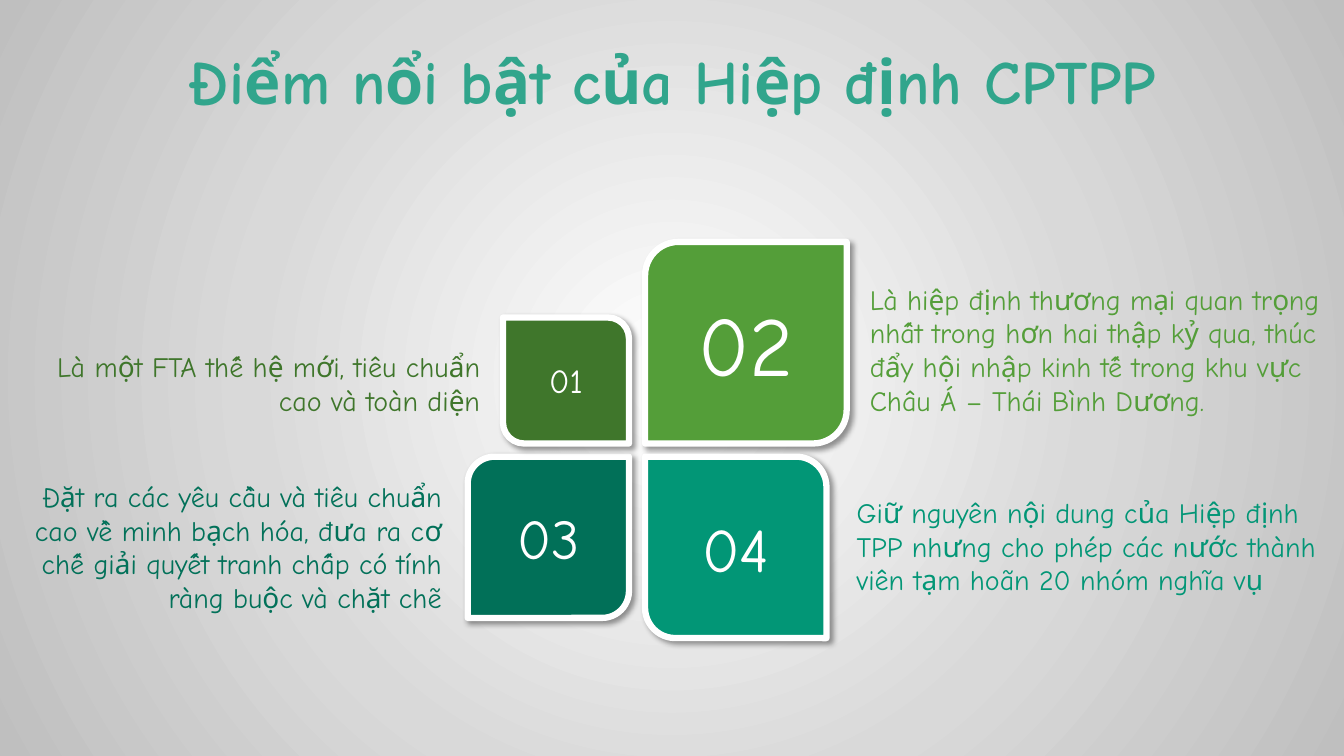
from pptx import Presentation
from pptx.util import Pt
from pptx.dml.color import RGBColor as RGB
from pptx.enum.shapes import MSO_SHAPE as Kind
from pptx.enum.text import PP_ALIGN as Align, MSO_ANCHOR as Anchor, MSO_AUTO_SIZE as Fit
from pptx.oxml import parse_xml
from pptx.oxml.ns import nsdecls

# Content: number, column, row, side, number size, flipped, fill
tiles = [
    ("02", 1, 0, 144, 60, False, "lime"),
    ("03", 0, 1, 115.2, 40, False, "pine"),
    ("01", 0, 0, 90, 24, True, "moss"),
    ("04", 1, 1, 129.6, 44, True, "teal"),
]
# Text, left, top, width, height, alignment, colour
notes = [
    ("Là một FTA thế hệ mới, tiêu chuẩn cao và toàn diện",
     2.2, 246.2, 347.8, 55.4, Align.RIGHT, "moss"),
    ("Là hiệp định thương mại quan trọng nhất trong hơn hai thập kỷ qua, "
     "thúc đẩy hội nhập kinh tế trong khu vực Châu Á – Thái Bình Dương.",
     614.2, 198, 345.6, 104.4, Align.LEFT, "lime"),
    ("Đặt ra các yêu cầu và tiêu chuẩn cao về minh bạch hóa, đưa ra cơ chế "
     "giải quyết tranh chấp có tính ràng buộc và chặt chẽ",
     0, 339.1, 322.6, 104.4, Align.RIGHT, "deep"),
    ("Giữ nguyên nội dung của Hiệp định TPP nhưng cho phép các nước thành "
     "viên tạm hoãn 20 nhóm nghĩa vụ",
     604.8, 350.6, 345.6, 80, Align.LEFT, "teal"),
]
title = ("Điểm nổi bật của Hiệp định CPTPP",
         59, 27.4, 842.4, 60.5, Align.CENTER, "head")

theme = {
    "font": "Comic Neue", "note": 20, "title": 44, "edge": 4.5,
    "white": "FFFFFF", "lime": "549E39", "pine": "017058", "moss": "3F762B",
    "teal": "029676", "deep": "027159", "head": "31A58C",
    "back": [(0, "FFFFFF"), (55, "D9D9D9"), (100, "BFBFBF")],
}
# Edges where the tiles meet: right of column 0, left of column 1, and so on
cols = (449.3, 460.8)
rows = (316.8, 326.2)


def color(name):
    return RGB.from_string(theme[name])


def write(frame, text, size, name, align, bold=None):
    frame.word_wrap = True
    par = frame.paragraphs[0]
    par.text, par.alignment = text, align
    font = par.font
    font.name, font.size, font.bold = theme["font"], Pt(size), bold
    font.color.rgb = color(name)


def add_note(slide, note, size, bold=None):
    text, x, y, w, h, align, name = note
    box = slide.shapes.add_textbox(Pt(x), Pt(y), Pt(w), Pt(h))
    write(box.text_frame, text, size, name, align, bold)
    box.text_frame.auto_size = Fit.SHAPE_TO_FIT_TEXT


def add_tile(slide, num, col, row, side, size, flip, name):
    x = cols[col] - (side if col == 0 else 0)
    y = rows[row] - (side if row == 0 else 0)
    tile = slide.shapes.add_shape(Kind.ROUND_2_DIAG_RECTANGLE,
                                  Pt(x), Pt(y), Pt(side), Pt(side))
    tile.fill.solid()
    tile.fill.fore_color.rgb = color(name)
    tile.line.color.rgb = color("white")
    tile.line.width = Pt(theme["edge"])
    props = tile.element.spPr
    if flip:
        props.xfrm.set("flipH", "1")
    props.append(parse_xml(
        f'<a:effectLst {nsdecls("a")}><a:outerShdw blurRad="{Pt(4)}" '
        f'dist="{Pt(3)}" dir="2700000" algn="tl" rotWithShape="0">'
        '<a:srgbClr val="000000"><a:alpha val="40000"/></a:srgbClr>'
        '</a:outerShdw></a:effectLst>'))
    tile.text_frame.vertical_anchor = Anchor.MIDDLE
    write(tile.text_frame, num, size, "white", Align.CENTER)


def paint(slide):
    slide.background.fill.solid()
    plain = slide.element.xpath(".//p:bgPr/a:solidFill")[0]
    stops = "".join(f'<a:gs pos="{pos * 1000}"><a:srgbClr val="{hue}"/></a:gs>'
                    for pos, hue in theme["back"])
    plain.getparent().replace(plain, parse_xml(
        f'<a:gradFill {nsdecls("a")}><a:gsLst>{stops}</a:gsLst>'
        '<a:path path="circle"><a:fillToRect l="50000" t="50000" '
        'r="50000" b="50000"/></a:path></a:gradFill>'))


def main():
    deck = Presentation()
    deck.slide_width, deck.slide_height = Pt(960), Pt(540)
    slide = deck.slides.add_slide(deck.slide_layouts[6])
    paint(slide)
    # Four petals around the centre
    for tile in tiles:
        add_tile(slide, *tile)
    # Notes beside the petals, then the title
    for note in notes:
        add_note(slide, note, theme["note"])
    add_note(slide, title, theme["title"], True)
    deck.save("out.pptx")


if __name__ == "__main__":
    main()
